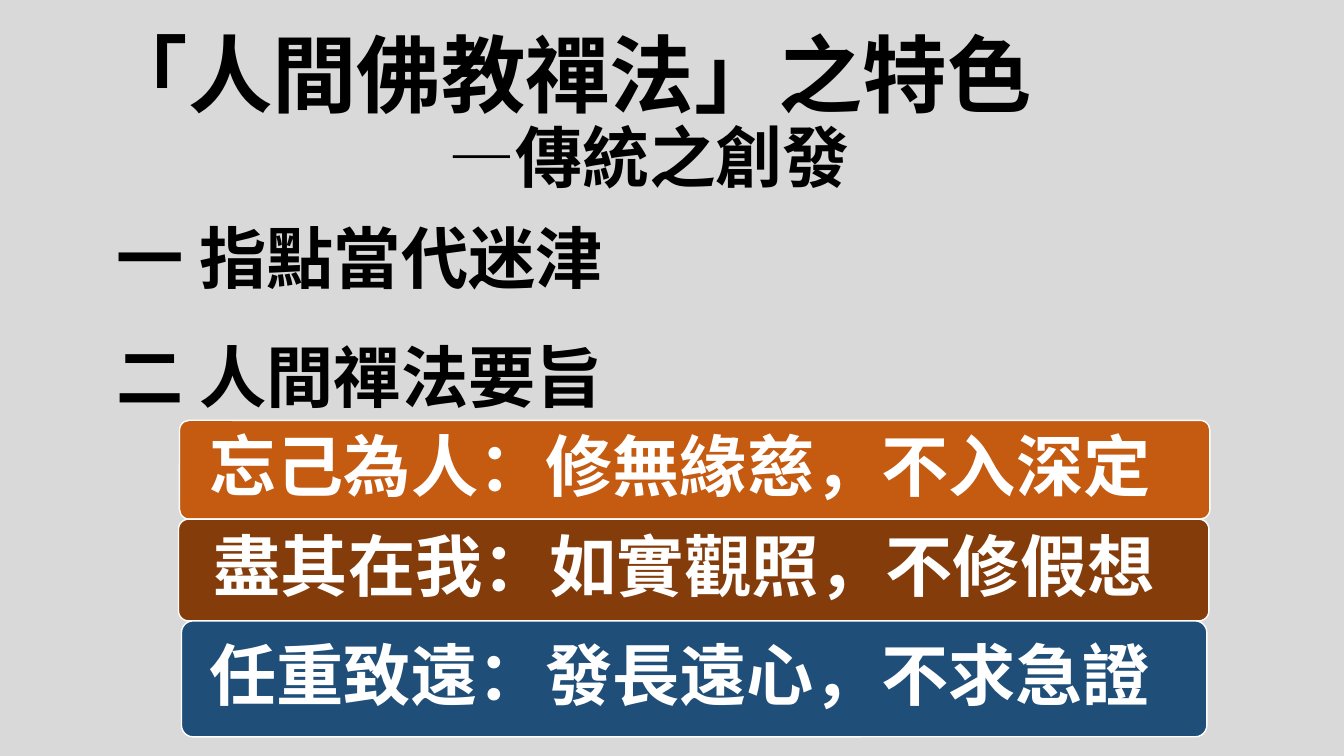
from pptx import Presentation
from pptx.dml.color import RGBColor
from pptx.enum.shapes import MSO_SHAPE
from pptx.enum.text import MSO_ANCHOR, MSO_AUTO_SIZE, PP_ALIGN
from pptx.oxml.ns import qn
from pptx.util import Inches, Pt

ROUNDED = MSO_SHAPE.ROUNDED_RECTANGLE
LEFT = PP_ALIGN.LEFT
TOP, MIDDLE = MSO_ANCHOR.TOP, MSO_ANCHOR.MIDDLE
NO_FIT = MSO_AUTO_SIZE.NONE

GREY = RGBColor(0xD9, 0xD9, 0xD9)
BLACK = RGBColor(0, 0, 0)
WHITE = RGBColor(0xFF, 0xFF, 0xFF)
ORANGE = RGBColor(0xC5, 0x5A, 0x11)
BROWN = RGBColor(0x84, 0x3C, 0x0B)
BLUE = RGBColor(0x1F, 0x4E, 0x79)

FONT = "Noto Sans CJK SC"
HEADING = "「人間佛教禪法」之特色"
SUBHEADING = "傳統之創發"
TOPICS = ["一 指點當代迷津", "二 人間禪法要旨"]
BARS = [
    ("忘己為人：修無緣慈，不入深定", ORANGE, (1.78, 4.17, 10.22, 0.98), 0.27),
    ("盡其在我：如實觀照，不修假想", BROWN, (1.77, 5.15, 10.22, 1.01), 0.32),
    ("任重致遠：發長遠心，不求急證", BLUE, (1.8, 6.16, 10.17, 1.15), 0.24),
]


def add_run(p, text, size=48, color=BLACK, bold=True, font=FONT):
    """Add a formatted run to a paragraph."""
    r = p.add_run()
    r.text = text
    r.font.size = Pt(size)
    r.font.bold = bold
    r.font.color.rgb = color
    if font:
        r.font.name = font
        ea = r.font._element.makeelement(qn("a:ea"), {"typeface": font})
        r.font._element.find(qn("a:latin")).addnext(ea)


def format_paragraph(p, spacing, before=0, indent=0):
    """Set the alignment, spacing and indent of an unbulleted paragraph."""
    p.alignment = LEFT
    p.line_spacing = spacing
    p.space_before = Pt(before)
    pPr = p._p.get_or_add_pPr()
    pPr.set("marL", str(Inches(indent)))
    pPr.set("indent", "0")
    pPr.append(pPr.makeelement(qn("a:buNone"), {}))


def place(sp, box, anchor):
    """Move a placeholder to its box and return its text frame."""
    sp.left, sp.top, sp.width, sp.height = map(Inches, box)
    tf = sp.text_frame
    tf.auto_size = NO_FIT
    tf.word_wrap = True
    tf.vertical_anchor = anchor
    return tf


def fill_title(sp, box):
    """Write the heading and its indented second line."""
    tf = place(sp, box, MIDDLE)
    p = tf.paragraphs[0]
    format_paragraph(p, 0.9)
    add_run(p, HEADING, size=60.3)
    p = tf.add_paragraph()
    format_paragraph(p, 0.9, indent=3.42)
    add_run(p, "—", size=47.7, bold=False, font=None)
    add_run(p, SUBHEADING, size=47.7)


def fill_topics(sp, box):
    """Write the numbered topics."""
    tf = place(sp, box, TOP)
    for i, topic in enumerate(TOPICS):
        p = tf.add_paragraph() if i else tf.paragraphs[0]
        format_paragraph(p, 1.3, before=10)
        add_run(p, topic)


def add_bar(slide, text, color, box, inset):
    """Draw one coloured bar with its text."""
    sp = slide.shapes.add_shape(ROUNDED, *map(Inches, box))
    sp.adjustments[0] = 0.1
    sp.shadow.inherit = False
    sp.fill.solid()
    sp.fill.fore_color.rgb = color
    sp.line.color.rgb = WHITE
    sp.line.width = Pt(1)
    tf = sp.text_frame
    tf.word_wrap = True
    tf.vertical_anchor = MIDDLE
    tf.margin_left = Inches(inset)
    tf.margin_top = tf.margin_bottom = 0
    p = tf.paragraphs[0]
    format_paragraph(p, 0.9)
    add_run(p, text, color=WHITE)


def main():
    """Build and save the slide."""
    prs = Presentation()
    prs.slide_width, prs.slide_height = Inches(13.33), Inches(7.5)
    slide = prs.slides.add_slide(prs.slide_layouts[1])
    slide.background.fill.solid()
    slide.background.fill.fore_color.rgb = GREY
    fill_title(slide.shapes.title, (0.93, 0.42, 11.5, 1.45))
    fill_topics(slide.placeholders[1], (1.06, 1.86, 9.94, 4.45))
    for bar in BARS:
        add_bar(slide, *bar)
    prs.save("out.pptx")


if __name__ == "__main__":
    main()
